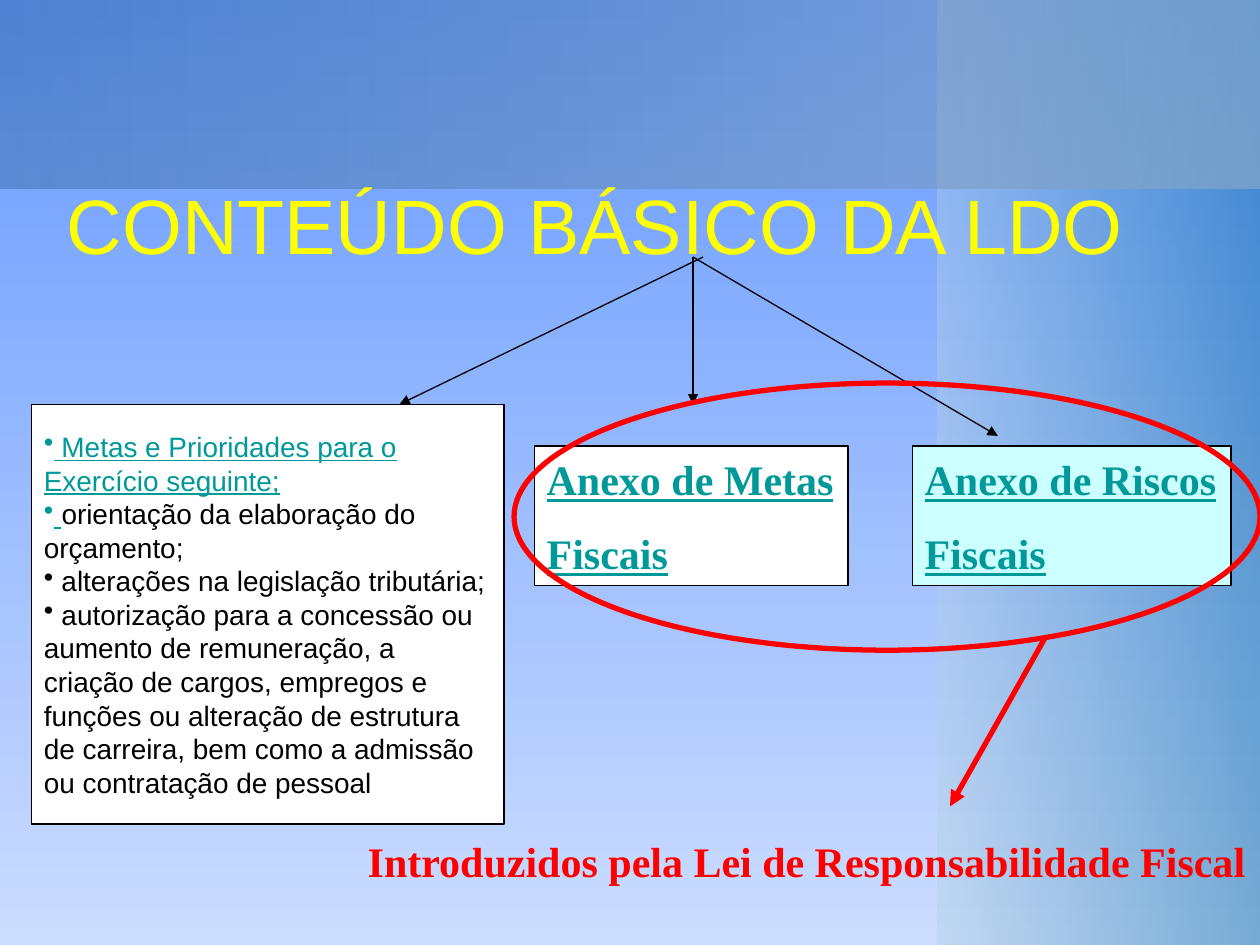
from lxml.etree import SubElement
from pptx import Presentation
from pptx.dml.color import RGBColor
from pptx.enum.shapes import MSO_CONNECTOR as LINK, MSO_SHAPE as SHAPE
from pptx.enum.text import MSO_ANCHOR as ANCHOR, PP_ALIGN as ALIGN
from pptx.oxml.ns import qn
from pptx.util import Inches, Pt

SKY, PALE = RGBColor(0x66, 0x99, 0xFF), RGBColor(0xCB, 0xDC, 0xFF)
MIST, SEA = RGBColor(0xB3, 0xD1, 0xE1), RGBColor(0x00, 0x66, 0x99)
STEEL, FOG = RGBColor(0x33, 0x66, 0x99), RGBColor(0x91, 0xAD, 0xC8)
YELLOW, RED = RGBColor(0xFF, 0xFF, 0x00), RGBColor(0xFF, 0x00, 0x00)
TEAL, AQUA = RGBColor(0x00, 0x99, 0x99), RGBColor(0xCC, 0xFF, 0xFF)
BLACK, WHITE = RGBColor(0, 0, 0), RGBColor(0xFF, 0xFF, 0xFF)
SANS, SERIF = "Arial", "Times New Roman"

TITLE = "CONTEÚDO BÁSICO DA LDO"
NOTE = "Introduzidos pela Lei de Responsabilidade Fiscal"
# Each item is a list of runs: text, linked look or not
ITEMS = [
    [(" Metas e Prioridades para o Exercício seguinte;", True)],
    [(" ", True), ("orientação da elaboração do orçamento;", False)],
    [(" alterações na legislação tributária;", False)],
    [(" autorização para a concessão ou aumento de remuneração, a criação "
      "de cargos, empregos e funções ou alteração de estrutura de carreira, "
      "bem como a admissão ou contratação de pessoal", False)],
]
ANNEXES = [
    (["Anexo de Metas", "Fiscais"], 4.24, 2.49, WHITE),
    (["Anexo de Riscos", "Fiscais"], 7.24, 2.53, AQUA),
]
# Box, then (colour, alpha %) at each end, left to right
BANDS = [
    ((7.44, 0, 2.56, 7.5), [(MIST, 40), (SEA, 42)]),
    ((0, 0, 10, 1.5), [(STEEL, 42), (FOG, 60)]),
]
ARROWS = [((5.58, 2.04), (3.17, 3.21)), ((5.5, 2.04), (5.5, 3.21)),
          ((5.5, 2.04), (7.92, 3.46))]

deck = Presentation()
deck.slide_width, deck.slide_height = Inches(10), Inches(7.5)
slide = deck.slides.add_slide(deck.slide_layouts[6])


def blend(fill, colors, angle):
    fill.gradient()
    fill.gradient_angle = angle
    for stop, color, place in zip(fill.gradient_stops, colors, (0, 1)):
        stop.color.rgb = color
        stop.position = place


def add_shape(kind, box, fill=None, line=None, width=0.75):
    shape = slide.shapes.add_shape(kind, *map(Inches, box))
    shape.shadow.inherit = False
    if fill is None:
        shape.fill.background()
    else:
        shape.fill.solid()
        shape.fill.fore_color.rgb = fill
    if line is None:
        shape.line.fill.background()
    else:
        shape.line.color.rgb = line
        shape.line.width = Pt(width)
    return shape


def add_arrow(start, end, color=BLACK, width=0.75):
    ends = map(Inches, start + end)
    arrow = slide.shapes.add_connector(LINK.STRAIGHT, *ends)
    arrow.line.color.rgb = color
    arrow.line.width = Pt(width)
    SubElement(arrow.line._get_or_add_ln(), qn("a:tailEnd"), type="triangle")
    SubElement(arrow._element.spPr, qn("a:effectLst"))


def write(shape, paras, font, size, bold=False, wrap=True, gap=0, bullet=False):
    """Fill a shape with paragraphs of (text, colour, underline) runs."""
    frame = shape.text_frame
    frame.word_wrap = wrap
    frame.vertical_anchor = ANCHOR.MIDDLE
    for i, runs in enumerate(paras):
        para = frame.add_paragraph() if i else frame.paragraphs[0]
        para.alignment = ALIGN.LEFT
        if i and gap:
            para.space_before = Pt(gap)
        if bullet:
            SubElement(para._p.get_or_add_pPr(), qn("a:buChar"), char="•")
        for text, color, under in runs:
            run = para.add_run()
            run.text = text
            run.font.name, run.font.size = font, Pt(size)
            run.font.bold, run.font.underline = bold, under
            run.font.color.rgb = color


def add_text(box, text, color, *style, **more):
    label = slide.shapes.add_textbox(*map(Inches, box))
    write(label, [[(text, color, False)]], *style, **more)


blend(slide.background.fill, (SKY, PALE), 270)
for box, ends in BANDS:
    band = add_shape(SHAPE.RECTANGLE, box)
    blend(band.fill, [color for color, _ in ends], 0)
    tints = band._element.spPr.iter(qn("a:srgbClr"))
    for tint, (_, alpha) in zip(list(tints), ends):
        SubElement(tint, qn("a:alpha"), val=str(alpha * 1000))

add_text((0.43, 1.17, 9.15, 1.21), TITLE, YELLOW, SANS, 44)

for lines, left, width, fill in ANNEXES:
    annex = add_shape(SHAPE.RECTANGLE, (left, 3.54, width, 1.11), fill, BLACK)
    write(annex, [[(text, TEAL, True)] for text in lines], SERIF, 24,
          bold=True, wrap=False, gap=13.5)

for start, end in ARROWS:
    add_arrow(start, end)

goals = add_shape(SHAPE.RECTANGLE, (0.25, 3.21, 3.75, 3.33), WHITE, BLACK)
write(goals, [[(text, TEAL if link else BLACK, link) for text, link in item]
              for item in ITEMS], SANS, 16, bullet=True)

add_shape(SHAPE.OVAL, (4.08, 3.04, 5.92, 2.12), line=RED, width=3)
add_arrow((8.29, 5.07), (7.54, 6.4), RED, 3)
add_text((2.82, 6.58, 7.17, 0.5), NOTE, RED, SERIF, 24, bold=True, wrap=False)

deck.save("out.pptx")
